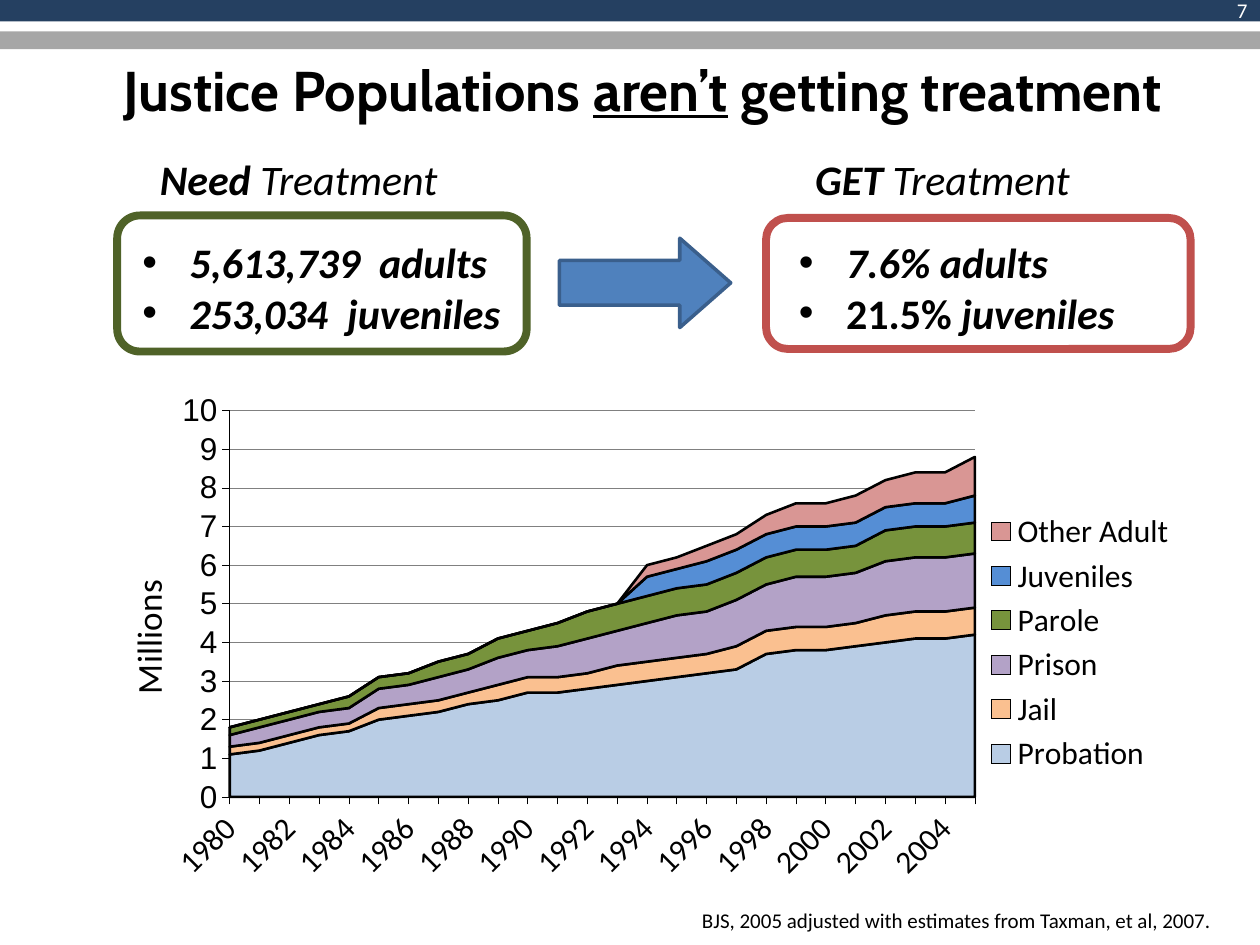
"""Build the slide on treatment in justice populations."""
from lxml import etree
from pptx import Presentation
from pptx.chart import data
from pptx.dml import color
from pptx.enum import chart as ce, shapes, text
from pptx.oxml import ns
from pptx.util import Inches, Pt

SHAPE = shapes.MSO_SHAPE
ALIGN = text.PP_ALIGN

SERIES = [
    ("Probation", "B9CDE5", [1.1, 1.2, 1.4, 1.6, 1.7, 2, 2.1, 2.2, 2.4, 2.5, 2.7, 2.7, 2.8,
                             2.9, 3, 3.1, 3.2, 3.3, 3.7, 3.8, 3.8, 3.9, 4, 4.1, 4.1, 4.2]),
    ("Jail", "FAC090", [0.2] * 5 + [0.3] * 4 + [0.4] * 4 + [0.5] * 4 + [0.6] * 5 + [0.7] * 4),
    ("Prison", "B3A2C7", [0.3, 0.4, 0.4, 0.4, 0.4, 0.5, 0.5, 0.6, 0.6, 0.7, 0.7, 0.8, 0.9,
                          0.9, 1, 1.1, 1.1, 1.2, 1.2, 1.3, 1.3, 1.3, 1.4, 1.4, 1.4, 1.4]),
    ("Parole", "77933C", [0.2] * 4 + [0.3] * 3 + [0.4] * 2 + [0.5] * 2 + [0.6] + [0.7] * 10
     + [0.8] * 4),
    ("Juveniles", "558ED5", [0] * 14 + [0.5] * 2 + [0.6] * 9 + [0.7]),
    ("Other Adult", "D99694", [0] * 14 + [0.3, 0.3, 0.4, 0.4, 0.5, 0.6, 0.6, 0.7, 0.7,
                                          0.8, 0.8, 1]),
]


def rgb(code):
    """Turn a hex string into a colour."""
    return color.RGBColor.from_string(code)


def style(font, size=24, name="Calibri", ink="000000", bold=False, italic=False, under=False):
    """Set every property of a font."""
    font.size, font.name = Pt(size), name
    font.bold, font.italic, font.underline = bold, italic, under
    font.color.rgb = rgb(ink)


def write(frame, lines, align=ALIGN.LEFT, anchor=text.MSO_ANCHOR.TOP, **look):
    """Fill a frame with lines, each a list of (words, changes) runs."""
    frame.word_wrap = True
    frame.auto_size = text.MSO_AUTO_SIZE.NONE
    frame.vertical_anchor = anchor
    for i, runs in enumerate(lines):
        para = frame.add_paragraph() if i else frame.paragraphs[0]
        para.alignment, para.space_before = align, Pt(0)
        for words, change in runs:
            run = para.add_run()
            run.text = words
            style(run.font, **{**look, **change})


def edge(line, ink, width):
    """Set the colour and width of a line."""
    line.color.rgb, line.width = rgb(ink), Pt(width)


def add(root, tag, val):
    """Append a chart element that holds one value."""
    return etree.SubElement(root, ns.qn("c:" + tag), val=str(val))


class Deck:
    """Hold the current slide and add each kind of element to it."""

    def __init__(self):
        """Open a deck with one two-list slide."""
        self.prs = Presentation()
        self.prs.slide_width, self.prs.slide_height = Inches(10), Inches(7.5)
        self.slide = self.prs.slides.add_slide(self.prs.slide_layouts[3])

    def fill(self, idx, box, lines, **look):
        """Move a placeholder and write in it."""
        hold = self.slide.placeholders[idx]
        hold.left, hold.top, hold.width, hold.height = map(Inches, box)
        write(hold.text_frame, lines, **look)

    def label(self, box, *runs, **look):
        """Add a text box with one line."""
        area = self.slide.shapes.add_textbox(*map(Inches, box))
        write(area.text_frame, [runs], **look)

    def shape(self, kind, box, fill=None, line=None, width=1):
        """Add a preset shape."""
        item = self.slide.shapes.add_shape(kind, *map(Inches, box))
        item.shadow.inherit = False
        if fill:
            item.fill.solid()
            item.fill.fore_color.rgb = rgb(fill)
        else:
            item.fill.background()
        if line:
            edge(item.line, line, width)
        else:
            item.line.fill.background()
        return item

    def chart(self, box, plot):
        """Add the stacked area chart."""
        info = data.CategoryChartData()
        info.categories = [str(year) for year in range(1980, 2006)]
        for name, _, vals in SERIES:
            info.add_series(name, vals)
        chart = self.slide.shapes.add_chart(
            ce.XL_CHART_TYPE.AREA_STACKED, *map(Inches, box), info).chart
        style(chart.font, 14.3, "Arial")
        chart.has_title = False
        for item, (_, ink, _) in zip(chart.plots[0].series, SERIES):
            item.format.fill.solid()
            item.format.fill.fore_color.rgb = rgb(ink)
            edge(item.format.line, "000000", 1.47)

        chart.has_legend = True
        chart.legend.position = ce.XL_LEGEND_POSITION.RIGHT
        chart.legend.include_in_layout = False
        style(chart.legend.font, 18)

        cat, val = chart.category_axis, chart.value_axis
        for axis, name in ((cat, "Calibri"), (val, "Arial")):
            axis.major_tick_mark = ce.XL_TICK_MARK.OUTSIDE
            axis.minor_tick_mark = ce.XL_TICK_MARK.NONE
            style(axis.tick_labels.font, 18, name)
            edge(axis.format.line, "000000", 0.37)
        cat.has_major_gridlines = False
        val.has_major_gridlines = True
        edge(val.major_gridlines.format.line, "808080", 0.37)
        val.minimum_scale, val.maximum_scale, val.major_unit = 0, 10, 1
        val.tick_labels.number_format = "0"
        val.tick_labels.number_format_is_linked = False
        write(val.axis_title.text_frame, [[("Millions", {})]], align=ALIGN.CENTER, size=20)

        root = chart.plots[0]._element.getparent()
        root.find(".//" + ns.qn("c:crossBetween")).set("val", "midCat")
        axis = cat._element
        axis.find(ns.qn("c:txPr")).find(ns.qn("a:bodyPr")).set("rot", "-2700000")
        skip = add(axis, "tickLblSkip", 2)
        mark = axis.find(ns.qn("c:noMultiLvlLbl"))
        if mark is not None:
            mark.addprevious(skip)
        for old in root.findall(ns.qn("c:layout")):
            root.remove(old)
        frame = etree.Element(ns.qn("c:layout"))
        root.insert(0, frame)
        spot = etree.SubElement(frame, ns.qn("c:manualLayout"))
        add(spot, "layoutTarget", "inner")
        add(spot, "xMode", "edge")
        add(spot, "yMode", "edge")
        for tag, size in zip("xywh", plot):
            add(spot, tag, size)


def main():
    """Build and save the slide."""
    deck = Deck()
    deck.shape(SHAPE.RECTANGLE, (0, 0, 10, 0.17), "254061")
    deck.shape(SHAPE.RECTANGLE, (0, 0.25, 10, 0.14), "A6A6A6")
    deck.chart((0.93, 3.05, 8.51, 4.1), (0.105, 0.051, 0.695, 0.748))
    deck.fill(0, (0.34, 0.08, 9.52, 1.25),
              [[("Justice Populations ", {}), ("aren’t", {"under": True}),
                (" getting treatment", {})]],
              align=ALIGN.CENTER, anchor=text.MSO_ANCHOR.MIDDLE,
              size=32, name="Cabin", bold=True)
    deck.label((1.69, 7.15, 8.02, 0.3),
               ("BJS, 2005 adjusted with estimates from Taxman, et al, 2007.", {}),
               align=ALIGN.RIGHT, size=12)
    deck.fill(1, (1.03, 1.83, 4.06, 0.71),
              [[("5,613,739  adults", {})], [("253,034  juveniles", {})]],
              bold=True, italic=True)
    deck.fill(2, (6.24, 1.83, 3.45, 0.75),
              [[("7.6% adults", {})],
               [("21.5% ", {"italic": False}), ("juveniles", {})]],
              bold=True, italic=True)
    arrow = deck.shape(SHAPE.RIGHT_ARROW, (4.44, 1.89, 1.36, 0.71), "4F81BD", "3A5F8C", 2)
    arrow.adjustments[1] = 0.57
    deck.label((7.67, -0.12, 2.33, 0.4), ("7", {}), align=ALIGN.RIGHT,
               anchor=text.MSO_ANCHOR.MIDDLE, size=12, ink="FFFFFF")
    deck.shape(SHAPE.ROUNDED_RECTANGLE, (0.93, 1.71, 3.25, 1.08), line="4F6228", width=4.5)
    deck.shape(SHAPE.ROUNDED_RECTANGLE, (6.08, 1.73, 3.37, 1.04), line="C0504D", width=4.5)
    for left, word in ((1.17, "Need"), (6.37, "GET")):
        deck.label((left, 1.17, 2.75, 0.5), (word, {"bold": True}), (" Treatment", {}),
                   italic=True)
    deck.prs.save("out.pptx")


if __name__ == "__main__":
    main()
